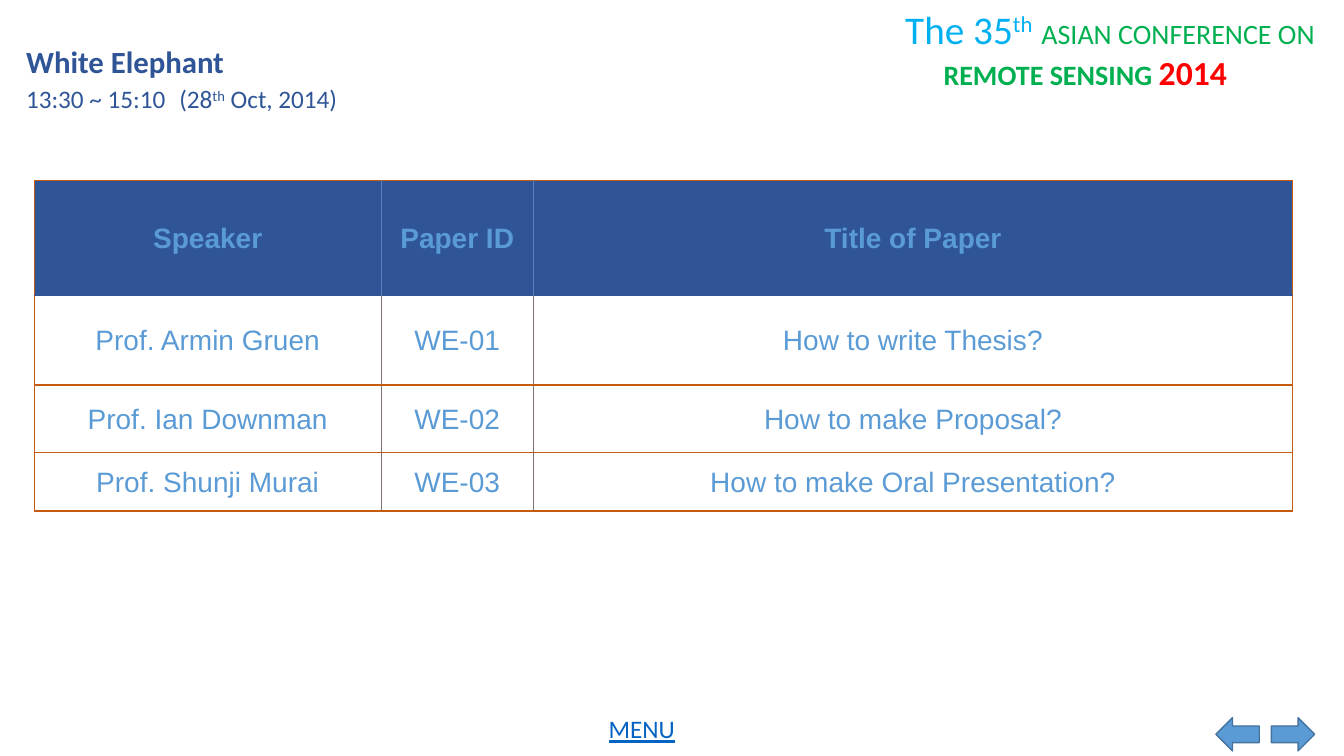
from lxml import etree
from pptx import Presentation
from pptx.dml.color import RGBColor
from pptx.enum.shapes import MSO_SHAPE
from pptx.enum.text import MSO_ANCHOR, MSO_AUTO_SIZE, PP_ALIGN
from pptx.oxml.ns import qn
from pptx.util import Inches, Pt

NAVY = RGBColor(0x2F, 0x55, 0x97)
BLUE = RGBColor(0x5B, 0x9B, 0xD5)
STEEL = RGBColor(0x43, 0x73, 0x9E)
SKY = RGBColor(0x00, 0xB0, 0xF0)
GREEN = RGBColor(0x00, 0xB0, 0x50)
RED = RGBColor(0xFF, 0x00, 0x00)
LINK = RGBColor(0x05, 0x63, 0xC1)
ORANGE = RGBColor(0xC5, 0x5A, 0x11)
HEAD_RULE = RGBColor(0x5B, 0x7D, 0xB8)
BODY_RULE = RGBColor(0x7F, 0x6F, 0x6F)


def add_run(p, text, size, color, bold=False, raised=False, face="Calibri"):
    r = p.add_run()
    r.text = text
    r.font.size = Pt(size)
    r.font.name = face
    r.font.bold = bold
    r.font.color.rgb = color
    if raised:
        r.font._element.set("baseline", "30000")
    return r


def add_border(cell, side, color, width):
    ln = etree.SubElement(cell._tc.get_or_add_tcPr(), qn("a:" + side), w=str(Pt(width)))
    fill = etree.SubElement(ln, qn("a:solidFill"))
    etree.SubElement(fill, qn("a:srgbClr"), val=str(color))


prs = Presentation()
prs.slide_width, prs.slide_height = Inches(13.33), Inches(7.5)
s = prs.slides.add_slide(prs.slide_layouts[5])

# Conference name
tf = s.shapes.add_textbox(Inches(8.88), 0, Inches(4.45), Inches(0.98)).text_frame
tf.word_wrap = True
p = tf.paragraphs[0]
add_run(p, "The 35", 28, SKY)
add_run(p, "th", 28, SKY, raised=True)
add_run(p, " ", 28, SKY)
add_run(p, "ASIAN CONFERENCE ON", 20, GREEN)
p = tf.add_paragraph()
p._p.get_or_add_pPr().set("marL", str(Inches(0.38)))
add_run(p, "REMOTE SENSING ", 20, GREEN, bold=True)
add_run(p, "2014", 24, RED, bold=True)

# Session title
title = s.shapes.title
title.left, title.top = Inches(0.16), Inches(0.37)
title.width, title.height = Inches(2.57), Inches(0.47)
tf = title.text_frame
tf.word_wrap = True
tf.auto_size = MSO_AUTO_SIZE.NONE
tf.vertical_anchor = MSO_ANCHOR.TOP
p = tf.paragraphs[0]
p.alignment = PP_ALIGN.LEFT
add_run(p, "White Elephant", 22, NAVY, bold=True)

# Session time and date
session = [
    (0.16, [("13:30 ~ 15:10", False)]),
    (1.68, [("(28", False), ("th", True), (" Oct, 2014)", False)]),
]
for x, parts in session:
    tf = s.shapes.add_textbox(Inches(x), Inches(0.78), Inches(2.57), Inches(0.4)).text_frame
    tf.word_wrap = True
    for text, raised in parts:
        add_run(tf.paragraphs[0], text, 18, NAVY, raised=raised)

# Programme table
rows = [
    ("Speaker", "Paper ID", "Title of Paper"),
    ("Prof. Armin Gruen", "WE-01", "How to write Thesis?"),
    ("Prof. Ian Downman", "WE-02", "How to make Proposal?"),
    ("Prof. Shunji Murai", "WE-03", "How to make Oral Presentation?"),
]
table = s.shapes.add_table(4, 3, Inches(0.34), Inches(1.79), Inches(12.48), Inches(3.28)).table
table.first_row = table.horz_banding = False
for column, width in zip(table.columns, (3.44, 1.51, 7.53)):
    column.width = Inches(width)
for row, height in zip(table.rows, (1.14, 0.89, 0.67, 0.58)):
    row.height = Inches(height)
for i, row in enumerate(rows):
    header = i == 0
    rule = HEAD_RULE if header else BODY_RULE
    for j, text in enumerate(row):
        cell = table.cell(i, j)
        cell.margin_left = cell.margin_right = cell.margin_top = Inches(0.01)
        cell.margin_bottom = 0
        cell.vertical_anchor = MSO_ANCHOR.MIDDLE
        add_border(cell, "lnL", ORANGE if j == 0 else rule, 1 if j == 0 else 0.75)
        add_border(cell, "lnR", ORANGE if j == 2 else rule, 1 if j == 2 else 0.75)
        add_border(cell, "lnT", NAVY if i == 1 else ORANGE, 1)
        add_border(cell, "lnB", NAVY if header else ORANGE, 1)
        if header:
            cell.fill.solid()
            cell.fill.fore_color.rgb = NAVY
        else:
            cell.fill.background()
        p = cell.text_frame.paragraphs[0]
        p.alignment = PP_ALIGN.CENTER
        add_run(p, text, 20, BLUE, bold=header, face="Arial")

# Menu label
tf = s.shapes.add_textbox(Inches(5.76), Inches(7.06), Inches(1.21), Inches(0.38)).text_frame
tf.word_wrap = True
tf.vertical_anchor = MSO_ANCHOR.MIDDLE
p = tf.paragraphs[0]
p.alignment = PP_ALIGN.CENTER
p.line_spacing = 0.9
add_run(p, "MENU", 18, LINK).font.underline = True

# Navigation arrows
for x, kind in ((12.61, MSO_SHAPE.RIGHT_ARROW), (12.06, MSO_SHAPE.LEFT_ARROW)):
    sp = s.shapes.add_shape(kind, Inches(x), Inches(7.12), Inches(0.43), Inches(0.33))
    sp.shadow.inherit = False
    sp.fill.solid()
    sp.fill.fore_color.rgb = BLUE
    sp.line.color.rgb = STEEL
    sp.line.width = Pt(1)

prs.save("out.pptx")
